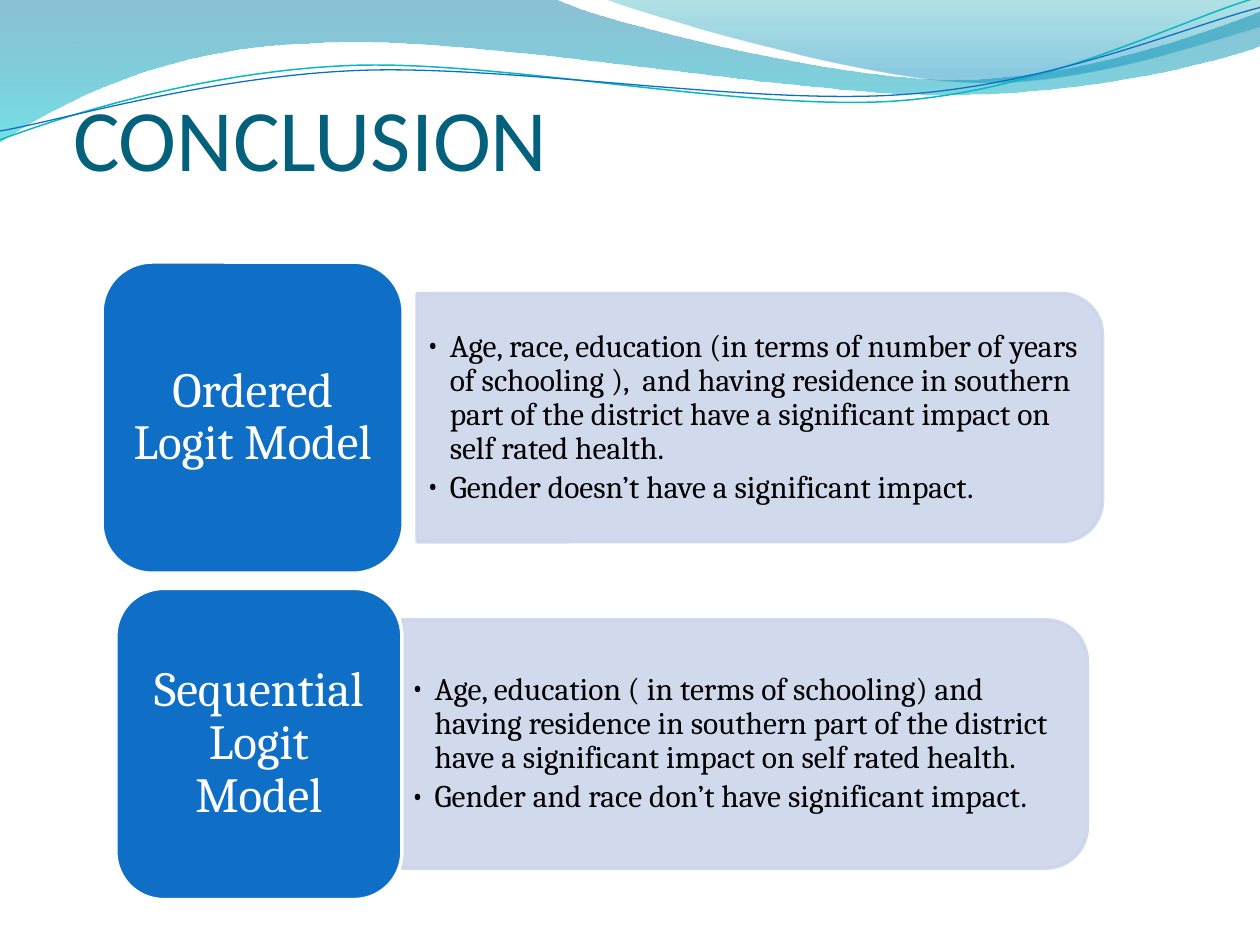
import math
from dataclasses import dataclass

from lxml import etree
from pptx import Presentation
from pptx.dml.color import RGBColor
from pptx.enum.shapes import MSO_SHAPE
from pptx.enum.text import MSO_ANCHOR, PP_ALIGN
from pptx.oxml.ns import qn
from pptx.util import Inches, Pt

ROUND_RECT = MSO_SHAPE.ROUNDED_RECTANGLE
ROUND_TOP = MSO_SHAPE.ROUND_2_SAME_RECTANGLE
MIDDLE, BOTTOM = MSO_ANCHOR.MIDDLE, MSO_ANCHOR.BOTTOM
LEFT, CENTER = PP_ALIGN.LEFT, PP_ALIGN.CENTER


@dataclass(frozen=True)
class Theme:
    title: str = "04617B"
    card: str = "0F6FC6"
    teal: str = "0AB8BF"
    tab: str = "CCD5EA"
    white: str = "FFFFFF"
    black: str = "000000"
    heading_font: str = "Calibri"
    body_font: str = "Cambria"
    title_size: int = 50
    card_size: int = 28
    body_size: int = 18


THEME = Theme()

# Each wave is a start point, then straight ends (2 numbers) or Bezier curves (6 numbers).
# Gradient stops are position, colour and opacity in percent.
BANDS = [
    ([(0, 0), (4.4, -0.01), (4.76, 0.17, 6.64, 0.63, 7.58, 0.63),
      (8.53, 0.63, 9.58, 0.26, 10, 0.09), (10.01, 0.36),
      (9.83, 0.44, 8.7, 0.76, 7.46, 0.75), (6.22, 0.75, 3.82, 0.28, 2.57, 0.34),
      (1.29, 0.36, 0.46, 0.83, -0.01, 1.13), (0, 0)],
     [(0, "0074A1", 45), (1, "00C6CF", 55)]),
    ([(4.79, -0.01), (5.09, 0.11, 6.82, 0.62, 7.69, 0.65),
      (8.56, 0.69, 9.61, 0.32, 10, 0.21), (10, 0), (4.79, -0.01)],
     [(0, "00A1A9", 30), (0.8, "008BBF", 45)]),
]
STRANDS = [
    ([(0, 1.11), (0.48, 0.93, 1.58, 0.57, 2.77, 0.52),
      (3.95, 0.47, 5.93, 0.89, 7.13, 0.8), (8.33, 0.71, 9.38, 0.15, 9.98, -0.02)],
     (4.99, 0.58), THEME.teal, 0.85),
    ([(0, 1.04), (0.47, 0.96, 1.64, 0.61, 2.83, 0.56),
      (4.03, 0.51, 5.97, 0.84, 7.17, 0.75), (8.36, 0.67, 9.41, 0.21, 10, 0.06)],
     (5, 0.59), THEME.card, 0.75),
]
STRAND_TILT = 2.7

MODELS = [
    ("Ordered Logit Model", (0.81, 2.08, 2.39, 2.47), 3.31, [
        "Age, race, education (in terms of number of years of schooling ),  and having "
        "residence in southern part of the district have a significant impact on "
        "self rated health.",
        "Gender doesn’t have a significant impact."]),
    ("Sequential Logit Model", (0.92, 4.67, 2.27, 2.47), 3.19, [
        "Age, education ( in terms of schooling) and having residence in southern part "
        "of the district have a significant impact on self rated health.",
        "Gender and race don’t have significant impact."]),
]


def set_opacity(element, percent):
    for color in element.iter(qn("a:srgbClr")):
        etree.SubElement(color, qn("a:alpha"), val=str(percent * 1000))


def split_points(segment):
    return list(zip(segment[::2], segment[1::2]))


def turn(segment, center, degrees):
    """Rotate all points of a segment about the center."""
    cos, sin = math.cos(math.radians(degrees)), math.sin(math.radians(degrees))
    turned = []
    for x, y in split_points(segment):
        dx, dy = x - center[0], y - center[1]
        turned += [center[0] + dx * cos - dy * sin, center[1] + dx * sin + dy * cos]
    return turned


def add_outline(page, segments, close):
    """Build a freeform through all points, then join each curve's three points."""
    points = [tuple(map(Inches, point))
              for segment in segments for point in split_points(segment)]
    builder = page.shapes.build_freeform(*points[0], scale=1.0)
    builder.add_line_segments(points[1:], close=close)
    shape = builder.convert_to_shape()
    shape.shadow.inherit = False
    lines = iter(list(shape._element.iter(qn("a:lnTo"))))
    for segment in segments[1:]:
        parts = [next(lines) for _ in split_points(segment)]
        if len(parts) == 3:
            curve = etree.Element(qn("a:cubicBezTo"))
            parts[0].addprevious(curve)
            for part in parts:
                curve.append(part[0])
                part.getparent().remove(part)
    return shape


def add_waves(page):
    for segments, stops in BANDS:
        band = add_outline(page, segments, True)
        band.line.fill.background()
        band.fill.gradient()
        band.fill.gradient_angle = 270
        for stop, (position, color, _) in zip(band.fill.gradient_stops, stops):
            stop.position = position
            stop.color.rgb = RGBColor.from_string(color)
        for element, (_, _, opacity) in zip(band._element.iter(qn("a:gs")), stops):
            set_opacity(element, opacity)
    for segments, center, color, width in STRANDS:
        level = [turn(segment, center, STRAND_TILT) for segment in segments]
        strand = add_outline(page, level, False)
        strand.rotation = 360 - STRAND_TILT
        strand.fill.background()
        strand.line.color.rgb = RGBColor.from_string(color)
        strand.line.width = Pt(width)


def add_panel(page, kind, box, fill, line):
    panel = page.shapes.add_shape(kind, *map(Inches, box))
    panel.shadow.inherit = False
    panel.fill.solid()
    panel.fill.fore_color.rgb = RGBColor.from_string(fill)
    panel.line.color.rgb = RGBColor.from_string(line)
    panel.line.width = Pt(2)
    return panel


def add_text(page, box, texts, font, size, color, anchor, margins, para_format):
    """Add a wrapped text box and return its paragraphs; margins run left, top, right, bottom."""
    frame = page.shapes.add_textbox(*map(Inches, box)).text_frame
    frame.word_wrap = True
    frame.vertical_anchor = anchor
    for side, margin in zip(("left", "top", "right", "bottom"), margins):
        setattr(frame, f"margin_{side}", Inches(margin))
    frame.text = "\n".join(texts)
    for para in frame.paragraphs:
        for name, value in para_format.items():
            setattr(para, name, value)
        span = para.runs[0]
        for name, value in {"name": font, "size": Pt(size)}.items():
            setattr(span.font, name, value)
        span.font.color.rgb = RGBColor.from_string(color)
    return frame.paragraphs


def add_bullet(para):
    properties = para._p.get_or_add_pPr()
    properties.set("marL", str(Inches(0.19)))
    properties.set("indent", str(-Inches(0.19)))
    etree.SubElement(properties, qn("a:buFont"), typeface=THEME.body_font)
    etree.SubElement(properties, qn("a:buChar"), char="•")


def add_model(page, name, box, tab_left, findings):
    """Place a model's card in the box, with its findings on a tab to the right."""
    left, top, width, height = box
    tab_width, tab_height = 5.44, 1.97
    tab_top = top + (height - tab_height) / 2
    shift = (tab_width - tab_height) / 2
    tab = add_panel(page, ROUND_TOP,
                    (tab_left + shift, tab_top - shift, tab_height, tab_width),
                    THEME.tab, THEME.tab)
    tab.rotation = 90
    set_opacity(tab._element, 90)
    paras = add_text(page, (tab_left, tab_top + 0.1, tab_width - 0.1, tab_height - 0.2),
                     findings, THEME.body_font, THEME.body_size, THEME.black, MIDDLE,
                     (0.07, 0.04, 0.07, 0.04),
                     {"alignment": LEFT, "line_spacing": 0.9, "space_after": Pt(3), "level": 1})
    for para in paras:
        add_bullet(para)

    add_panel(page, ROUND_RECT, box, THEME.card, THEME.white)
    inset = 0.12
    add_text(page, (left + inset, top + inset, width - 2 * inset, height - 2 * inset),
             [name], THEME.body_font, THEME.card_size, THEME.white, MIDDLE,
             (0.12, 0.06, 0.12, 0.06), {"alignment": CENTER, "line_spacing": 0.9})


def main():
    deck = Presentation()
    deck.slide_width, deck.slide_height = Inches(10), Inches(7.5)
    page = deck.slides.add_slide(deck.slide_layouts[6])
    add_waves(page)
    add_text(page, (0.58, 0.25, 9, 1.25), ["CONCLUSION"], THEME.heading_font,
             THEME.title_size, THEME.title, BOTTOM, (0, 0.05, 0, 0), {"alignment": LEFT})
    for model in MODELS:
        add_model(page, *model)
    deck.save("out.pptx")


if __name__ == "__main__":
    main()
